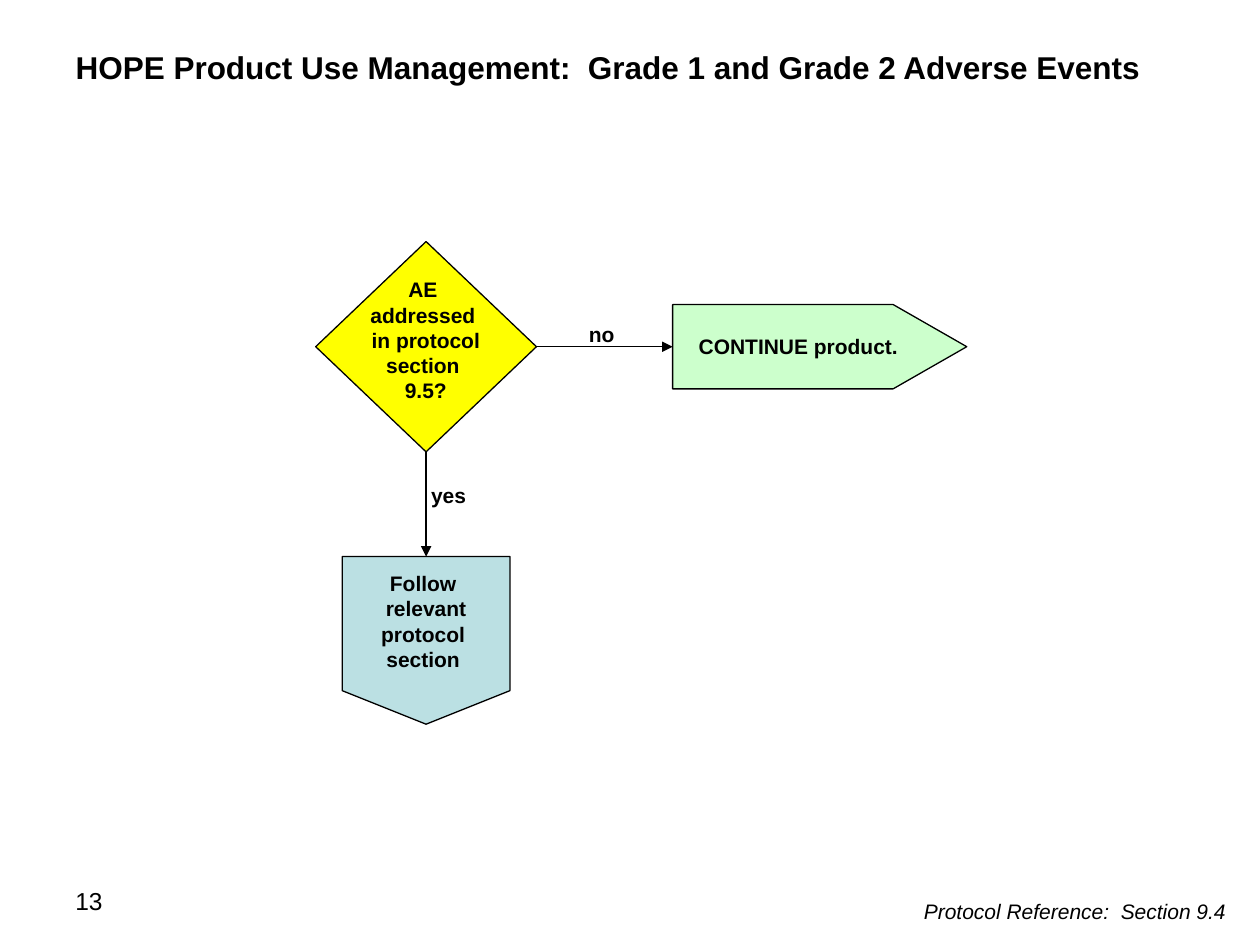
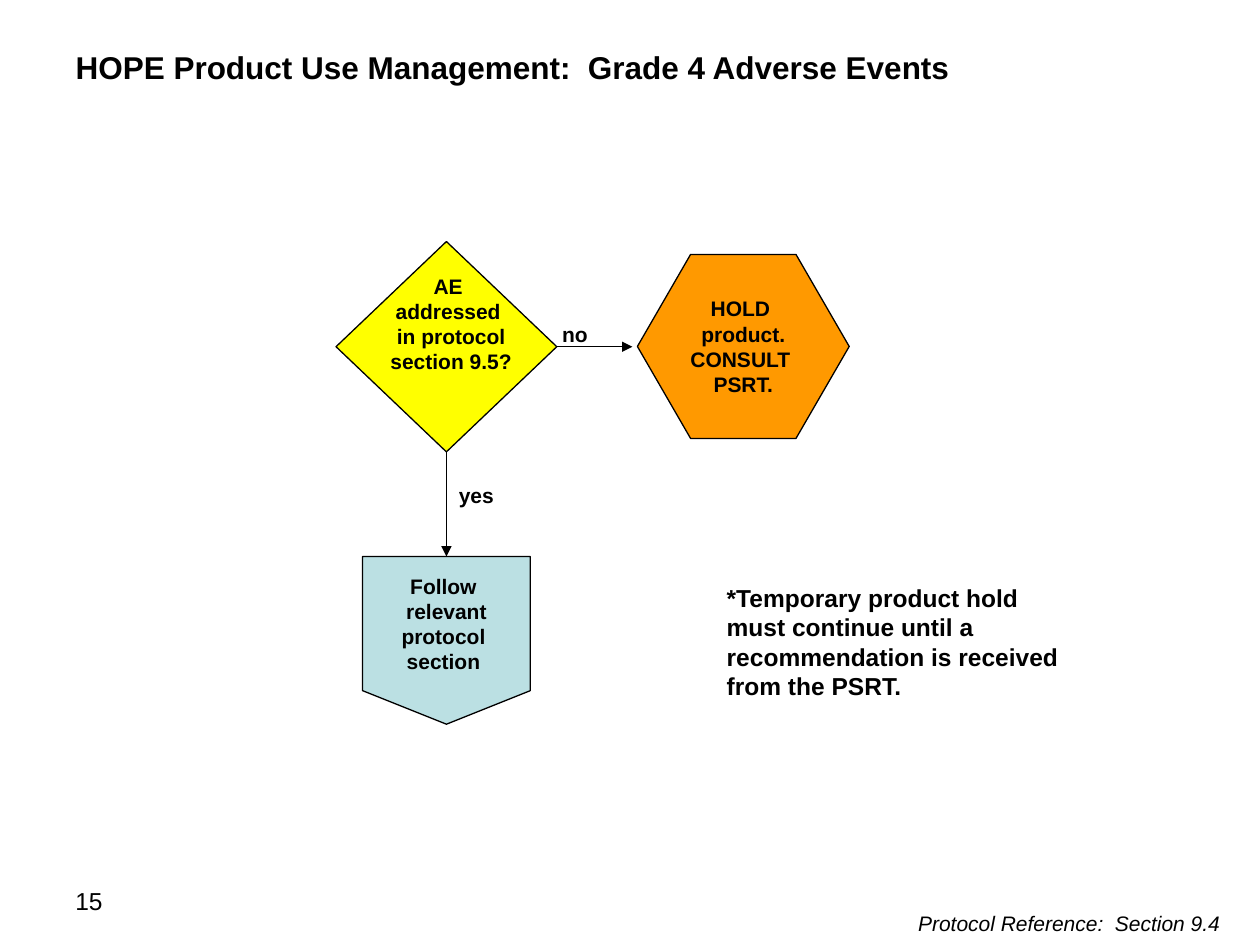
from lxml import etree
from pptx import Presentation
from pptx.dml.color import RGBColor
from pptx.enum.shapes import MSO_CONNECTOR, MSO_SHAPE
from pptx.enum.text import MSO_ANCHOR, MSO_AUTO_SIZE, PP_ALIGN
from pptx.oxml.ns import qn
from pptx.util import Cm, Pt

BLACK = RGBColor(0x00, 0x00, 0x00)
YELLOW = RGBColor(0xFF, 0xFF, 0x00)
GREEN = RGBColor(0xCC, 0xFF, 0xCC)
BLUE = RGBColor(0xBB, 0xE0, 0xE3)
ORANGE = RGBColor(0xFF, 0x99, 0x00)
FONT = "Arial"
LINE_WIDTH = Pt(0.75)

# Flowchart geometry in cm, shared by both slides
DIAMOND_W, DIAMOND_H, DIAMOND_TOP = 4.45, 4.24, 4.87
MIDDLE_Y = DIAMOND_TOP + DIAMOND_H / 2
DIAMOND_BOTTOM = DIAMOND_TOP + DIAMOND_H
PAGE_SIZE, PAGE_TOP = 3.38, 11.22
TEXT_W = 3.81


def write(tf, text, size, bold=False, italic=False, align=PP_ALIGN.LEFT):
    tf.word_wrap = True
    tf.auto_size = MSO_AUTO_SIZE.NONE
    tf.vertical_anchor = MSO_ANCHOR.TOP
    tf.text = text
    for p in tf.paragraphs:
        p.alignment = align
        for r in p.runs:
            r.font.name = FONT
            r.font.size = Pt(size)
            r.font.bold = bold
            r.font.italic = italic
            r.font.color.rgb = BLACK


def add_text(slide, x, y, w, h, text, size=12, **style):
    sp = slide.shapes.add_textbox(Cm(x), Cm(y), Cm(w), Cm(h))
    write(sp.text_frame, text, size, **style)
    return sp


def add_label(slide, x, y, w, h, text):
    """Bold centred text that sits on a flowchart symbol or arrow."""
    add_text(slide, x, y, w, h, text, bold=True, align=PP_ALIGN.CENTER)


def add_symbol(slide, kind, x, y, w, h, fill, adj=None):
    sp = slide.shapes.add_shape(kind, Cm(x), Cm(y), Cm(w), Cm(h))
    sp.shadow.inherit = False
    sp.fill.solid()
    sp.fill.fore_color.rgb = fill
    sp.line.color.rgb = BLACK
    sp.line.width = LINE_WIDTH
    if adj is not None:
        sp.adjustments[0] = adj


def add_arrow(slide, x1, y1, x2, y2):
    cxn = slide.shapes.add_connector(
        MSO_CONNECTOR.STRAIGHT, Cm(x1), Cm(y1), Cm(x2), Cm(y2))
    cxn.line.color.rgb = BLACK
    cxn.line.width = LINE_WIDTH
    etree.SubElement(cxn.line._get_or_add_ln(), qn("a:tailEnd"), type="triangle")
    etree.SubElement(cxn._element.spPr, qn("a:effectLst"))


def add_slide(prs, title, number, reference, reference_y):
    slide = prs.slides.add_slide(prs.slide_layouts[5])
    sp = slide.shapes.title
    sp.left, sp.top, sp.width, sp.height = Cm(1.27), Cm(0.84), Cm(22.86), Cm(1.02)
    write(sp.text_frame, title, 18, bold=True)
    add_text(slide, 1.27, 17.73, 5.92, 1.32, number, size=14)
    add_text(slide, 15.44, reference_y, 9.53, 0.76, reference,
             italic=True, align=PP_ALIGN.RIGHT)
    return slide


def add_decision(slide, center, question, question_x, question_y,
                 no_x, no_end, yes_x, follow_y):
    """Yellow question with its yes branch down and its no arrow to the right."""
    right = center + DIAMOND_W / 2
    add_symbol(slide, MSO_SHAPE.DIAMOND, center - DIAMOND_W / 2, DIAMOND_TOP,
               DIAMOND_W, DIAMOND_H, YELLOW)
    add_label(slide, question_x, question_y, TEXT_W, 2.82, question)

    # No branch
    add_arrow(slide, right, MIDDLE_Y, no_end, MIDDLE_Y)
    add_label(slide, no_x, 6.35, 2.46, 0.76, "no")

    # Yes branch
    add_arrow(slide, center, DIAMOND_BOTTOM, center, PAGE_TOP)
    yes = add_text(slide, yes_x, 9.6, 7.19, 0.76, "yes", bold=True)
    yes.text_frame.margin_left = 0
    add_symbol(slide, MSO_SHAPE.FLOWCHART_OFFPAGE_CONNECTOR,
               center - PAGE_SIZE / 2, PAGE_TOP, PAGE_SIZE, PAGE_SIZE, BLUE)
    add_label(slide, center - TEXT_W / 2, follow_y, TEXT_W, 2.31,
              "Follow \nrelevant protocol \nsection ")


def main():
    prs = Presentation()
    prs.slide_width, prs.slide_height = Cm(25.4), Cm(19.05)

    # Grades 1 and 2: continue
    slide = add_slide(
        prs, "HOPE Product Use Management:  Grade 1 and Grade 2 Adverse Events",
        "13", "Protocol Reference:  Section 9.4", 17.98)
    add_decision(slide, 8.59, "AE \naddressed \nin protocol section \n9.5?",
                 question_x=6.68, question_y=5.46, no_x=10.9, no_end=13.56,
                 yes_x=8.69, follow_y=11.38)
    add_symbol(slide, MSO_SHAPE.PENTAGON, 13.56, 6.14, 5.93, 1.7, GREEN, 0.873)
    add_label(slide, 13.34, 6.6, 5.51, 0.76, "CONTINUE product.")

    # Grade 4: hold
    slide = add_slide(
        prs, "HOPE Product Use Management:  Grade 4 Adverse Events",
        "15", "Protocol Reference:  Section 9.4 ", 18.24)
    add_decision(slide, 9, "AE \naddressed \nin protocol section 9.5?",
                 question_x=7.19, question_y=5.38, no_x=10.36, no_end=12.75,
                 yes_x=9.25, follow_y=11.43)
    add_symbol(slide, MSO_SHAPE.HEXAGON, 12.85, 5.13, 4.27, 3.71, ORANGE, 0.289)
    add_label(slide, 12.8, 5.84, 4.37, 2.29, "HOLD \nproduct.\nCONSULT \nPSRT.")
    add_text(slide, 14.4, 11.63, 7.19, 2.64,
             "*Temporary product hold must continue until a recommendation "
             "is received from the PSRT.", size=14, bold=True)

    prs.save("out.pptx")


if __name__ == "__main__":
    main()
